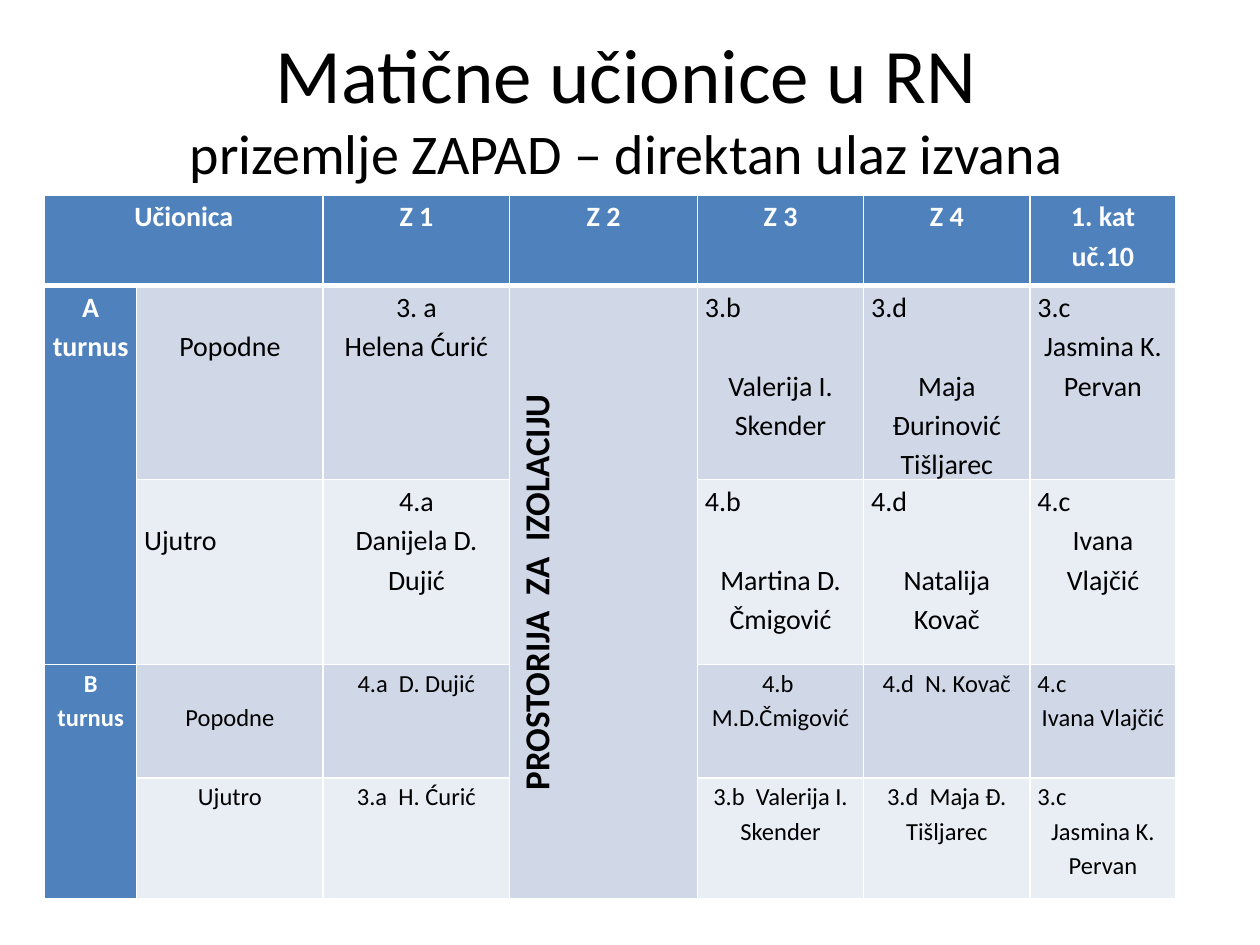
import pptx
import pptx.dml.color
import pptx.enum.text
import pptx.oxml
import pptx.oxml.ns
import pptx.util

Pt = pptx.util.Pt
ALIGN = pptx.enum.text.PP_ALIGN
ANCHOR = pptx.enum.text.MSO_ANCHOR

FONT = "Calibri"
COLORS = {"black": "000000", "white": "FFFFFF", "blue": "4F81BD",
          "band_dark": "D0D8E8", "band_light": "E9EDF4"}

COLUMNS = [52.6, 106.6, 106.6, 107.3, 95, 95, 83.5]
ROWS = [51.8, 105.8, 105.8, 64.8, 69.1]
SIZES = [16, 16, 16, 14, 14]
LINE = 22.5  # height of one line of 16 pt text
INSET = 4.3

# Each cell: text and layout. "split" puts the class at the left above the
# teacher, "gap" leaves a line between them, "drop" starts one line lower.
# None marks a cell covered by a merged one.
CELLS = [
    [("Učionica", ""), None, ("Z 1", ""), ("Z 2", ""), ("Z 3", ""),
     ("Z 4", ""), ("1. kat uč.10", "")],
    [("A turnus", ""), ("Popodne", "drop"), ("3. a\nHelena Ćurić", ""),
     ("PROSTORIJA  ZA  IZOLACIJU", "vertical"),
     ("3.b\nValerija I. Skender", "split gap"),
     ("3.d\nMaja Đurinović Tišljarec", "split gap"),
     ("3.c\nJasmina K. Pervan", "split")],
    [None, ("Ujutro", "drop left"), ("4.a\nDanijela D. Dujić", ""), None,
     ("4.b\nMartina D. Čmigović", "split gap"),
     ("4.d\nNatalija Kovač", "split gap"),
     ("4.c\nIvana Vlajčić", "split")],
    [("B turnus", ""), ("Popodne", "drop"), ("4.a  D. Dujić", ""), None,
     ("4.b  M.D.Čmigović", ""), ("4.d  N. Kovač", ""),
     ("4.c\nIvana Vlajčić", "split")],
    [None, ("Ujutro", ""), ("3.a  H. Ćurić", ""), None,
     ("3.b  Valerija I. Skender", ""), ("3.d  Maja Đ. Tišljarec", ""),
     ("3.c\nJasmina K. Pervan", "split")],
]
# First row, first column, last row, last column
MERGES = [(0, 0, 0, 1), (1, 0, 2, 0), (3, 0, 4, 0), (1, 3, 4, 3)]


def rgb(name):
    return pptx.dml.color.RGBColor.from_string(COLORS[name])


def style_span(span, size, color, bold=False):
    span.font.name = FONT
    span.font.size = Pt(size)
    span.font.bold = bold
    span.font.color.rgb = rgb(color)


def set_borders(cell, row):
    """White grid lines, heavier between the header and the body."""
    widths = {"L": 1, "R": 1, "T": 3 if row == 1 else 1, "B": 3 if row == 0 else 1}
    properties = cell._tc.get_or_add_tcPr()
    for index, (side, width) in enumerate(widths.items()):
        line = pptx.oxml.parse_xml(
            f'<a:ln{side} {pptx.oxml.ns.nsdecls("a")} w="{Pt(width)}"><a:solidFill>'
            f'<a:srgbClr val="{COLORS["white"]}"/></a:solidFill></a:ln{side}>')
        properties.insert(index, line)


def fill_cell(cell, text, layout, size, color, bold):
    """Write one cell's paragraphs according to its layout words."""
    words = layout.split()
    cell.text_frame.text = text
    for number, para in enumerate(cell.text_frame.paragraphs):
        at_left = "left" in words or ("split" in words and number == 0)
        para.alignment = ALIGN.LEFT if at_left else ALIGN.CENTER
        para.line_spacing = 1.15
        if "gap" in words and number == 0:
            para.space_after = Pt(LINE)
        for span in para.runs:
            style_span(span, size, color, bold)
    if "drop" in words:
        cell.margin_top = Pt(LINE * size / 16)
    if "vertical" in words:
        cell._tc.get_or_add_tcPr().set("vert", "vert270")
        cell.vertical_anchor = ANCHOR.MIDDLE


def add_title(page, left, top, width, height):
    box = page.shapes.add_textbox(Pt(left), Pt(top), Pt(width), Pt(height))
    frame = box.text_frame
    frame.word_wrap = True
    frame.vertical_anchor = ANCHOR.MIDDLE
    para = frame.paragraphs[0]
    para.text = "Matične učionice u RN\vprizemlje ZAPAD – direktan ulaz izvana"
    para.alignment = ALIGN.CENTER
    for span, size in zip(para.runs, (44, 32)):
        style_span(span, size, "black")


def add_classrooms(page, left, top):
    table = page.shapes.add_table(
        len(ROWS), len(COLUMNS), Pt(left), Pt(top),
        Pt(sum(COLUMNS)), Pt(sum(ROWS))).table
    for column, width in zip(table.columns, COLUMNS):
        column.width = Pt(width)
    for row, height in zip(table.rows, ROWS):
        row.height = Pt(height)

    for r, row in enumerate(CELLS):
        for c, content in enumerate(row):
            cell = table.cell(r, c)
            heading = r == 0 or c == 0
            band = "band_dark" if r % 2 or c == 3 else "band_light"
            cell.margin_left = cell.margin_right = Pt(INSET)
            cell.margin_top = cell.margin_bottom = Pt(0)
            cell.fill.solid()
            cell.fill.fore_color.rgb = rgb("blue" if heading else band)
            set_borders(cell, r)
            if content:
                text, layout = content
                vertical = layout == "vertical"
                fill_cell(cell, text, layout, 20 if vertical else SIZES[r],
                          "white" if heading else "black", heading or vertical)

    for first_row, first_column, last_row, last_column in MERGES:
        table.cell(first_row, first_column).merge(table.cell(last_row, last_column))


def main():
    deck = pptx.Presentation()
    deck.slide_width, deck.slide_height = Pt(720), Pt(540)
    page = deck.slides.add_slide(deck.slide_layouts[6])
    add_title(page, 34, -2, 648, 125)
    add_classrooms(page, 25.5, 111.5)
    deck.save("out.pptx")


if __name__ == "__main__":
    main()
